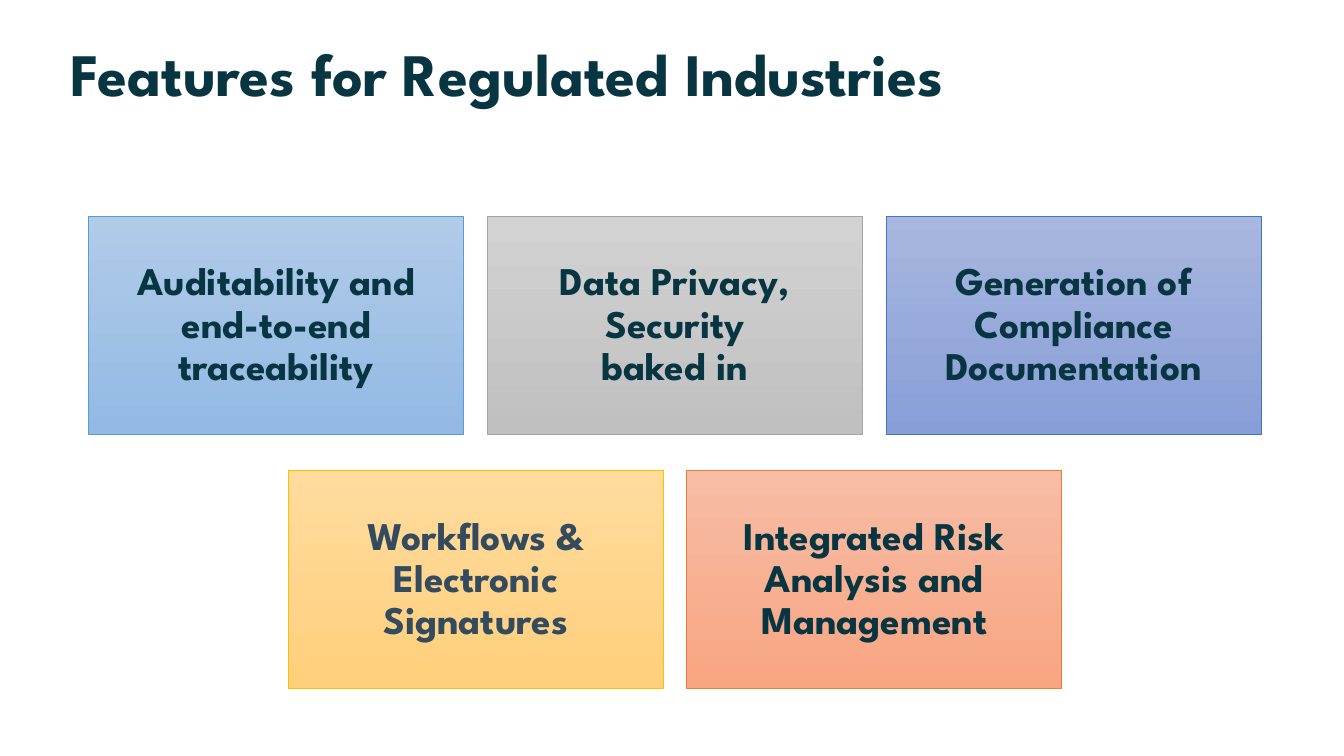
from pptx import Presentation
from pptx.dml.color import RGBColor
from pptx.enum.shapes import MSO_SHAPE
from pptx.enum.text import MSO_ANCHOR, MSO_AUTO_SIZE, PP_ALIGN
from pptx.util import Pt

TITLE = "Features for Regulated Industries"
INK, SLATE = "073642", "344B5F"
# lines, gradient top, gradient bottom, outline, text colour
ROWS = [
    [
        (["Auditability and end-to-end traceability"], "B1CBE9", "93B9E4", "5B9BD5", INK),
        (["Data Privacy, Security", "baked in"], "D2D2D2", "C0C0C0", "A5A5A5", INK),
        (["Generation of Compliance Documentation"], "A8B7DF", "889ED7", "4472C4", INK),
    ],
    [
        (["Workflows & Electronic Signatures"], "FFDB9E", "FFD07C", "FFC000", SLATE),
        (["Integrated Risk Analysis and Management"], "F7BDA5", "F8A582", "ED7D31", INK),
    ],
]
FONT = "League Spartan"
CARD_W, CARD_H = 268, 155.5
GAP_X, GAP_Y = 16.75, 26
CENTER_X, TOP = 482.1, 154.8
PAD = 8.4


def rgb(color):
    return RGBColor.from_string(color)


def write(tf, lines, size, color, align):
    tf.word_wrap = True
    tf.auto_size = MSO_AUTO_SIZE.NONE
    tf.vertical_anchor = MSO_ANCHOR.MIDDLE
    p = tf.paragraphs[0]
    p.alignment = align
    p.line_spacing = 0.9
    p.space_before = Pt(0)
    for i, line in enumerate(lines):
        if i:
            p.add_line_break()
        r = p.add_run()
        r.text = line
        r.font.name, r.font.size, r.font.bold = FONT, Pt(size), True
        r.font.color.rgb = rgb(color)


def add_card(s, left, top, card):
    lines, start, end, outline, color = card
    sp = s.shapes.add_shape(MSO_SHAPE.RECTANGLE, Pt(left), Pt(top), Pt(CARD_W), Pt(CARD_H))
    sp.shadow.inherit = False
    sp.fill.gradient()
    sp.fill.gradient_angle = 270
    for stop, shade, position in zip(sp.fill.gradient_stops, (start, end), (0, 1)):
        stop.color.rgb = rgb(shade)
        stop.position = position
    sp.line.color.rgb = rgb(outline)
    sp.line.width = Pt(0.5)
    tf = sp.text_frame
    tf.margin_left = tf.margin_right = tf.margin_top = tf.margin_bottom = Pt(PAD)
    write(tf, lines, 28, color, PP_ALIGN.CENTER)


def main():
    prs = Presentation()
    prs.slide_width, prs.slide_height = Pt(960), Pt(540)
    s = prs.slides.add_slide(prs.slide_layouts[5])

    title = s.shapes.title
    title.left, title.top, title.width, title.height = Pt(43.2), Pt(24.5), Pt(828), Pt(60.5)
    write(title.text_frame, [TITLE], 43, INK, PP_ALIGN.LEFT)

    for i, row in enumerate(ROWS):
        row_w = len(row) * CARD_W + (len(row) - 1) * GAP_X
        for j, card in enumerate(row):
            left = CENTER_X - row_w / 2 + j * (CARD_W + GAP_X)
            add_card(s, left, TOP + i * (CARD_H + GAP_Y), card)

    prs.save("out.pptx")


if __name__ == "__main__":
    main()
